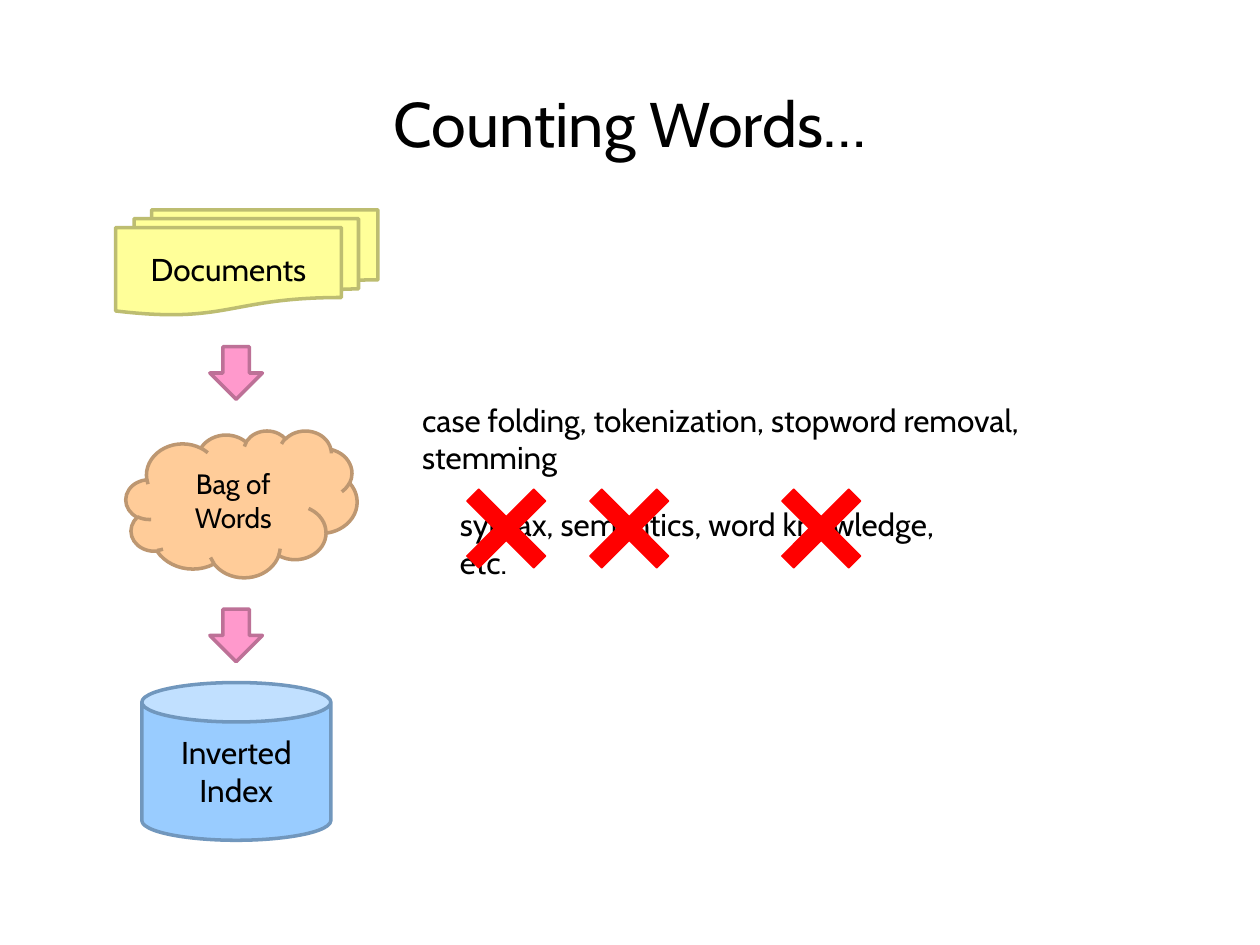
from pptx import Presentation
from pptx.dml.color import RGBColor
from pptx.enum import shapes, text
from pptx.util import Cm, Pt

BLACK = RGBColor(0x00, 0x00, 0x00)
RED = RGBColor(0xFF, 0x00, 0x00)
YELLOW = RGBColor(0xFF, 0xFF, 0x99)
OLIVE = RGBColor(0xBD, 0xBD, 0x71)
BLUE = RGBColor(0x99, 0xCC, 0xFF)
NAVY = RGBColor(0x71, 0x97, 0xBD)
PEACH = RGBColor(0xFF, 0xCC, 0x99)
BROWN = RGBColor(0xBD, 0x97, 0x71)
PINK = RGBColor(0xFF, 0x99, 0xCC)
PLUM = RGBColor(0xBD, 0x71, 0x97)
KIND = shapes.MSO_SHAPE
MIDDLE = text.MSO_ANCHOR.MIDDLE
CENTER = text.PP_ALIGN.CENTER


def write(frame, lines, size, align=None, wrap=True):
    frame.word_wrap = wrap
    for i, line in enumerate(lines):
        para = frame.add_paragraph() if i else frame.paragraphs[0]
        para.alignment = align
        run = para.add_run()
        run.text = line
        run.font.name = "Cabin"
        run.font.size = Pt(size)
        run.font.color.rgb = BLACK


def draw(kind, box, fill, edge, width=2, turn=0):
    shape = slide.shapes.add_shape(kind, *map(Cm, box))
    shape.shadow.inherit = False
    shape.fill.solid()
    shape.fill.fore_color.rgb = fill
    shape.line.color.rgb = edge
    shape.line.width = Pt(width)
    shape.rotation = turn
    return shape


deck = Presentation()
deck.slide_width, deck.slide_height = Cm(25.4), Cm(19.05)
slide = deck.slides.add_slide(deck.slide_layouts[5])

title = slide.shapes.title
title.left, title.top, title.width, title.height = Cm(0), Cm(1.52), Cm(25.4), Cm(1.91)
title.text_frame.vertical_anchor = MIDDLE
write(title.text_frame, ["Counting Words…"], 36, CENTER)

# Stages of the pipeline, with an arrow between each two
stages = [
    (KIND.FLOWCHART_MULTIDOCUMENT, (2.33, 4.23, 5.29, 2.12), YELLOW, OLIVE, ["Documents"], 18, False),
    (KIND.CLOUD, (2.54, 8.68, 4.66, 2.96), PEACH, BROWN, ["Bag of Words"], 16, True),
    (KIND.CAN, (2.86, 13.76, 3.81, 3.18), BLUE, NAVY, ["Inverted", "Index"], 18, False),
]
for kind, box, fill, edge, lines, size, wrap in stages:
    stage = draw(kind, box, fill, edge)
    stage.text_frame.vertical_anchor = MIDDLE
    write(stage.text_frame, lines, size, CENTER, wrap)

for top in (6.99, 12.28):
    draw(KIND.RIGHT_ARROW, (4.23, top, 1.06, 1.06), PINK, PLUM, turn=90)

notes = [
    ((8.26, 7.95, 14.73, 1.02), "case folding, tokenization, stopword removal, stemming"),
    ((9.02, 10.06, 10.77, 1.02), "syntax, semantics, word knowledge, etc."),
]
for box, line in notes:
    note = slide.shapes.add_textbox(*map(Cm, box))
    write(note.text_frame, [line], 18)

# Crosses over what is left out
for left in (9.25, 11.73, 15.6):
    cross = draw(KIND.CROSS, (left, 9.7, 1.91, 1.91), RED, RED, 0.75, 45)
    cross.adjustments[0] = 0.41

deck.save("out.pptx")
